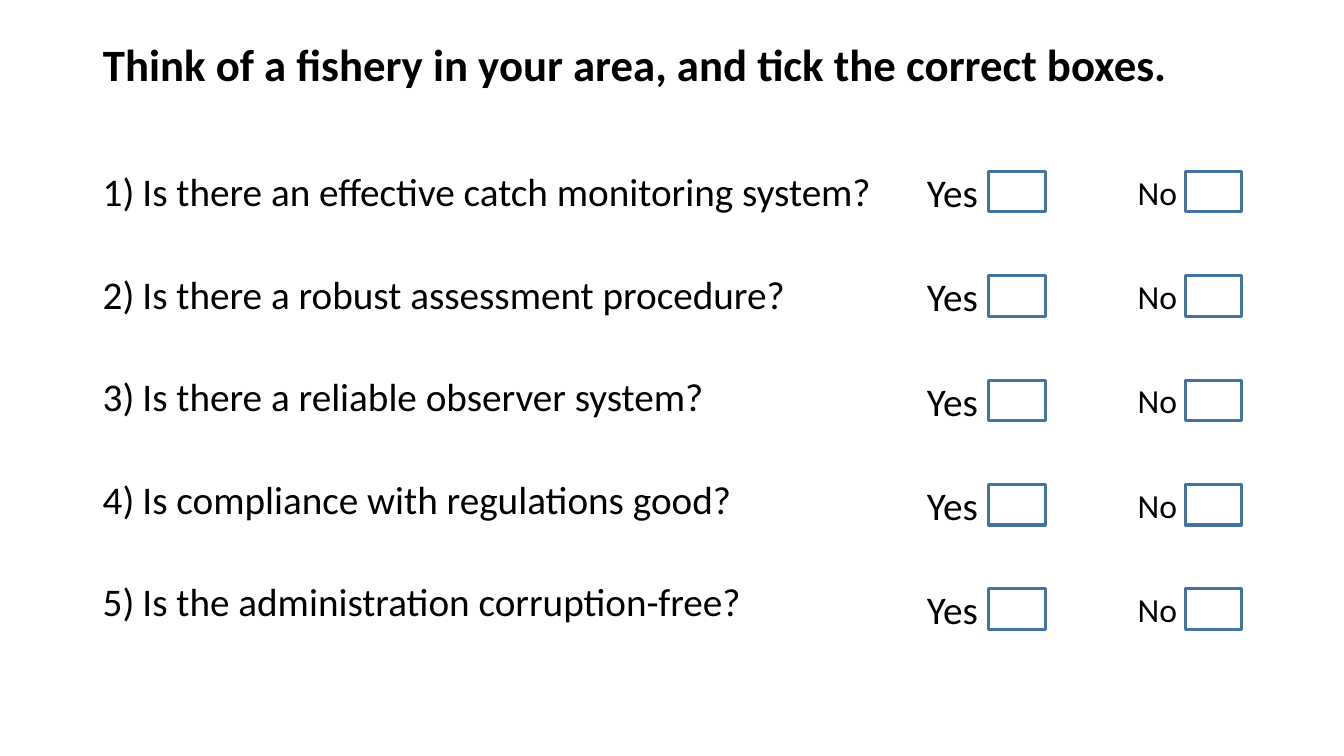
from dataclasses import dataclass

from lxml import etree
from pptx import Presentation
from pptx import util as u
from pptx.dml import color
from pptx.enum import shapes, text
from pptx.oxml import ns

Cm, Pt = u.Cm, u.Pt


@dataclass(frozen=True)
class Theme:
    font: str = "Calibri"
    ink: color.RGBColor = color.RGBColor(0, 0, 0)
    outline: color.RGBColor = color.RGBColor(0x43, 0x73, 0x9E)
    title: int = 32
    body: int = 28
    small: int = 24


THEME = Theme()

TITLE = "Think of a fishery in your area, and tick the correct boxes."
QUESTIONS = [
    "Is there an effective catch monitoring system?",
    "Is there a robust assessment procedure?",
    "Is there a reliable observer system?",
    "Is compliance with regulations good?",
    "Is the administration corruption-free?",
]
# Label, type size, label left, label width, tick box left (cm within a row)
OPTIONS = [
    ("Yes", THEME.body, 0, 1.8, 1.81),
    ("No", THEME.small, 5.31, 1.52, 6.76),
]
ROW_PITCH = 2.63
BOX_W, BOX_H = 1.42, 1.02
LABEL_H = 1.45


def add_text(p, content, size=THEME.body, bold=False, line=1.0, before=0):
    p.alignment = text.PP_ALIGN.LEFT
    p.line_spacing = line
    p.space_before = Pt(before)
    r = p.add_run()
    r.text = content
    r.font.name = THEME.font
    r.font.size = Pt(size)
    r.font.bold = bold
    r.font.color.rgb = THEME.ink


def number(p, indent):
    pPr = p._p.get_or_add_pPr()
    pPr.set("marL", str(indent))
    pPr.set("indent", str(-indent))
    bullet = etree.SubElement(pPr, ns.qn("a:buAutoNum"))
    bullet.set("type", "arabicParenR")


def add_title(s, x, y, w, h):
    sp = s.shapes.title
    sp.left, sp.top, sp.width, sp.height = Cm(x), Cm(y), Cm(w), Cm(h)
    tf = sp.text_frame
    tf.word_wrap = True
    tf.vertical_anchor = text.MSO_ANCHOR.MIDDLE
    add_text(tf.paragraphs[0], TITLE, size=THEME.title, bold=True, line=0.9)


def add_questions(s, x, y, w, h):
    tf = s.shapes.add_textbox(Cm(x), Cm(y), Cm(w), Cm(h)).text_frame
    tf.word_wrap = True
    for i, question in enumerate(QUESTIONS):
        p = tf.paragraphs[0] if i == 0 else tf.add_paragraph()
        add_text(p, question, line=0.8, before=46.4 if i else 0)
        number(p, Cm(1))


def add_option(s, x, y, label, size, label_x, label_w, box_x):
    # Tick box
    sp = s.shapes.add_shape(shapes.MSO_SHAPE.RECTANGLE,
                            Cm(x + box_x), Cm(y), Cm(BOX_W), Cm(BOX_H))
    sp.shadow.inherit = False
    sp.fill.background()
    sp.line.color.rgb = THEME.outline
    sp.line.width = Pt(2.25)

    # Label, centred on the height of the box
    label_y = y + (BOX_H - LABEL_H) / 2
    tf = s.shapes.add_textbox(Cm(x + label_x), Cm(label_y),
                              Cm(label_w), Cm(LABEL_H)).text_frame
    tf.word_wrap = False
    tf.vertical_anchor = text.MSO_ANCHOR.MIDDLE
    add_text(tf.paragraphs[0], label, size=size)


def add_answers(s, x, y):
    for row in range(len(QUESTIONS)):
        for option in OPTIONS:
            add_option(s, x, y + row * ROW_PITCH, *option)


def main():
    prs = Presentation()
    prs.slide_width, prs.slide_height = Cm(33.87), Cm(19.05)
    s = prs.slides.add_slide(prs.slide_layouts.get_by_name("Title Only"))
    add_title(s, 2.34, 0.38, 29.21, 2.62)
    add_questions(s, 2.34, 4.32, 20.7, 12.09)
    add_answers(s, 23.11, 4.32)
    prs.save("out.pptx")


if __name__ == "__main__":
    main()
